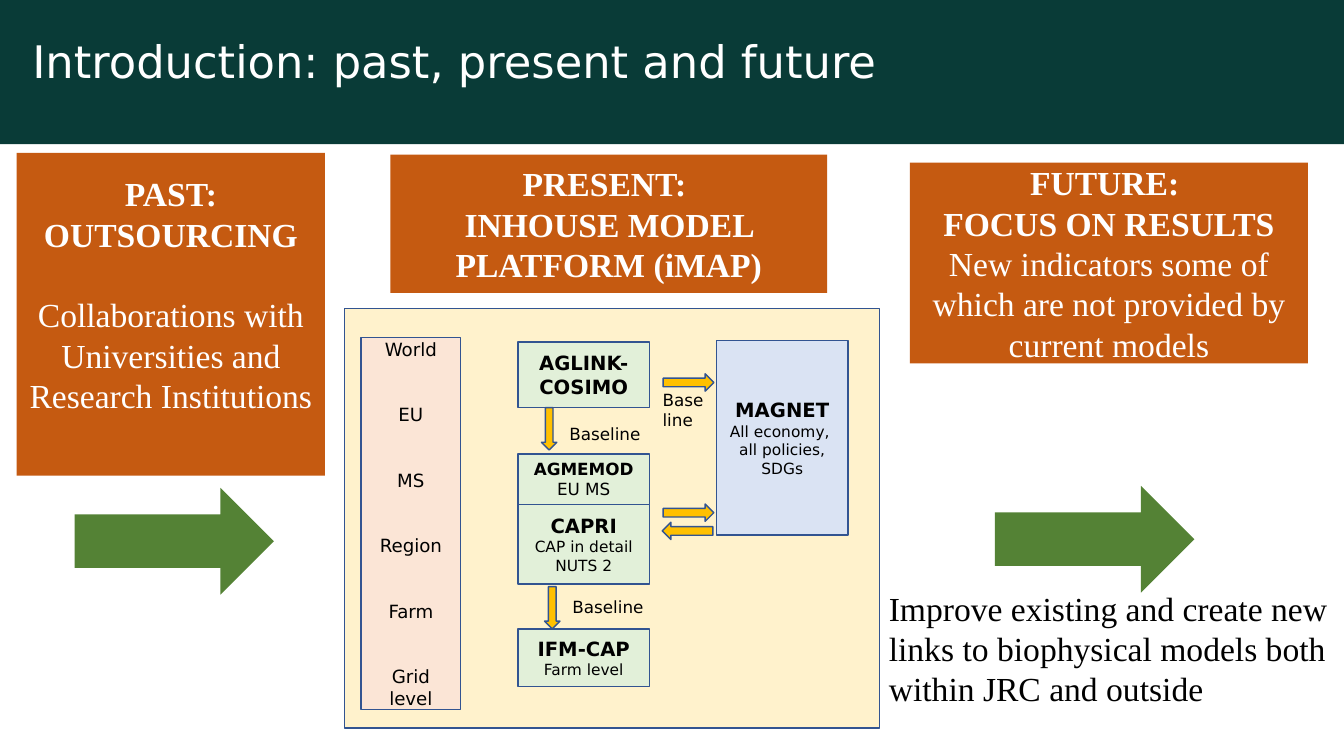
from pptx import Presentation
from pptx.dml.color import RGBColor
from pptx.enum.shapes import MSO_SHAPE
from pptx.enum.text import MSO_ANCHOR, PP_ALIGN
from pptx.util import Pt

THEME = {
    "sans": "DejaVu Sans", "serif": "Times New Roman",
    "banner": "093B37", "orange": "C55A11", "green": "548235",
    "cream": "FFF2CC", "pink": "FBE5D6", "mint": "E2F0D9",
    "blue": "DAE3F3", "amber": "FFC000", "outline": "325491",
    "white": "FFFFFF", "black": "000000",
    "title": 32, "heading": 24, "model": 14, "scale": 13, "label": 12, "detail": 11,
}

prs = Presentation()
prs.slide_width, prs.slide_height = Pt(960), Pt(540)
s = prs.slides.add_slide(prs.slide_layouts[6])


def add_shape(kind, box, fill, line=None):
    sp = s.shapes.add_shape(kind, *map(Pt, box))
    sp.shadow.inherit = False
    sp.fill.solid()
    sp.fill.fore_color.rgb = RGBColor.from_string(THEME[fill])
    if line:
        sp.line.color.rgb = RGBColor.from_string(THEME[line])
        sp.line.width = Pt(1)
    else:
        sp.line.fill.background()
    return sp


def write(sp, lines, font, color, align=PP_ALIGN.CENTER, wrap=True, gap=0):
    """Each line is (text, theme size, bold); gap goes between paragraphs."""
    tf = sp.text_frame
    tf.word_wrap = wrap
    tf.vertical_anchor = MSO_ANCHOR.MIDDLE if align == PP_ALIGN.CENTER else MSO_ANCHOR.TOP
    for i, (text, size, bold) in enumerate(lines):
        p = tf.paragraphs[0] if i == 0 else tf.add_paragraph()
        p.alignment = align
        if i and gap:
            p.space_before = Pt(gap)
        r = p.add_run()
        r.text = text
        values = {"name": THEME[font], "size": Pt(THEME[size]), "bold": bold}
        for key, value in values.items():
            setattr(r.font, key, value)
        r.font.color.rgb = RGBColor.from_string(THEME[color])


# Title banner
add_shape(MSO_SHAPE.RECTANGLE, (0, 0, 960, 103), "banner")
title = s.shapes.add_textbox(Pt(16), Pt(25), Pt(927), Pt(71))
write(title, [("Introduction: past, present and future", "title", False)],
      "sans", "white", PP_ALIGN.LEFT)
title.text_frame.paragraphs[0].line_spacing = 0.9

# Platform panel with the scale column
add_shape(MSO_SHAPE.RECTANGLE, (246.2, 220.5, 382, 299.5), "cream", "outline")
scale = add_shape(MSO_SHAPE.RECTANGLE, (257.8, 241, 71.3, 266), "pink", "outline")
levels = ["World", "EU", "MS", "Region", "Farm", "Grid level"]
write(scale, [(level, "scale", False) for level in levels], "sans", "black", gap=31.2)

# Models: box, fill, name, name size, detail lines, detail size
MODEL_X, MODEL_W = 370, 94
models = [
    ((MODEL_X, 244.3, MODEL_W, 46.8), "mint", "AGLINK-COSIMO", "model", [], "detail"),
    ((MODEL_X, 324.2, MODEL_W, 36), "mint", "AGMEMOD", "label", ["EU MS"], "label"),
    ((MODEL_X, 360.2, MODEL_W, 56.9), "mint", "CAPRI", "model",
     ["CAP in detail", "NUTS 2"], "detail"),
    ((MODEL_X, 449.3, MODEL_W, 41), "mint", "IFM-CAP", "model", ["Farm level"], "detail"),
    ((511.8, 243.2, MODEL_W, 139), "blue", "MAGNET", "model",
     ["All economy, ", "all policies,", "SDGs"], "detail"),
]
for box, fill, name, size, details, detail_size in models:
    sp = add_shape(MSO_SHAPE.RECTANGLE, box, fill, "outline")
    write(sp, [(name, size, True)] + [(d, detail_size, False) for d in details],
          "sans", "black")

# Links between models
for x, y in [(386.8, 291.2), (389, 419)]:
    add_shape(MSO_SHAPE.DOWN_ARROW, (x, y, 11, 30.2), "amber", "outline")
for x, y, turn in [(473.7, 267, 0), (473.7, 360, 0), (473, 373, 180)]:
    arrow = add_shape(MSO_SHAPE.RIGHT_ARROW, (x, y, 36.2, 12.4), "amber", "outline")
    arrow.rotation = turn

# Link labels
for box, lines in [
    ((399.6, 299, 72, 21.6), ["Baseline"]),
    ((401.8, 423, 72, 21.6), ["Baseline"]),
    ((466.2, 275, 46, 36), ["Base", "line"]),
]:
    label = s.shapes.add_textbox(*map(Pt, box))
    write(label, [(t, "label", False) for t in lines], "sans", "black", PP_ALIGN.LEFT)

# Period cards
past = add_shape(MSO_SHAPE.RECTANGLE, (12, 109.2, 220.2, 230.6), "orange")
write(past, [("PAST: OUTSOURCING", "heading", True),
             ("Collaborations with Universities and Research Institutions", "heading", False)],
      "serif", "white", gap=28.8)
past.text_frame.margin_bottom = Pt(32.4)

present = add_shape(MSO_SHAPE.RECTANGLE, (278.8, 110.4, 312, 98.8), "orange")
write(present, [("PRESENT: ", "heading", True),
                ("INHOUSE MODEL PLATFORM (iMAP)", "heading", True)], "serif", "white")

future = add_shape(MSO_SHAPE.RECTANGLE, (650, 116.2, 284.2, 143.4), "orange")
write(future, [("FUTURE: ", "heading", True), ("FOCUS ON RESULTS", "heading", True),
               ("New indicators some of which are not provided by current models",
                "heading", False)], "serif", "white")

# Time arrows
for x, y in [(53.3, 348.4), (710.7, 347)]:
    add_shape(MSO_SHAPE.RIGHT_ARROW, (x, y, 142.4, 76.4), "green")

# Outlook
outlook = s.shapes.add_textbox(Pt(627.8), Pt(416.2), Pt(336), Pt(94.3))
write(outlook, [(t, "heading", False) for t in (
    "Improve existing and create new",
    "links to biophysical models both",
    "within JRC and outside")], "serif", "black", PP_ALIGN.LEFT, wrap=False)

prs.save("out.pptx")
